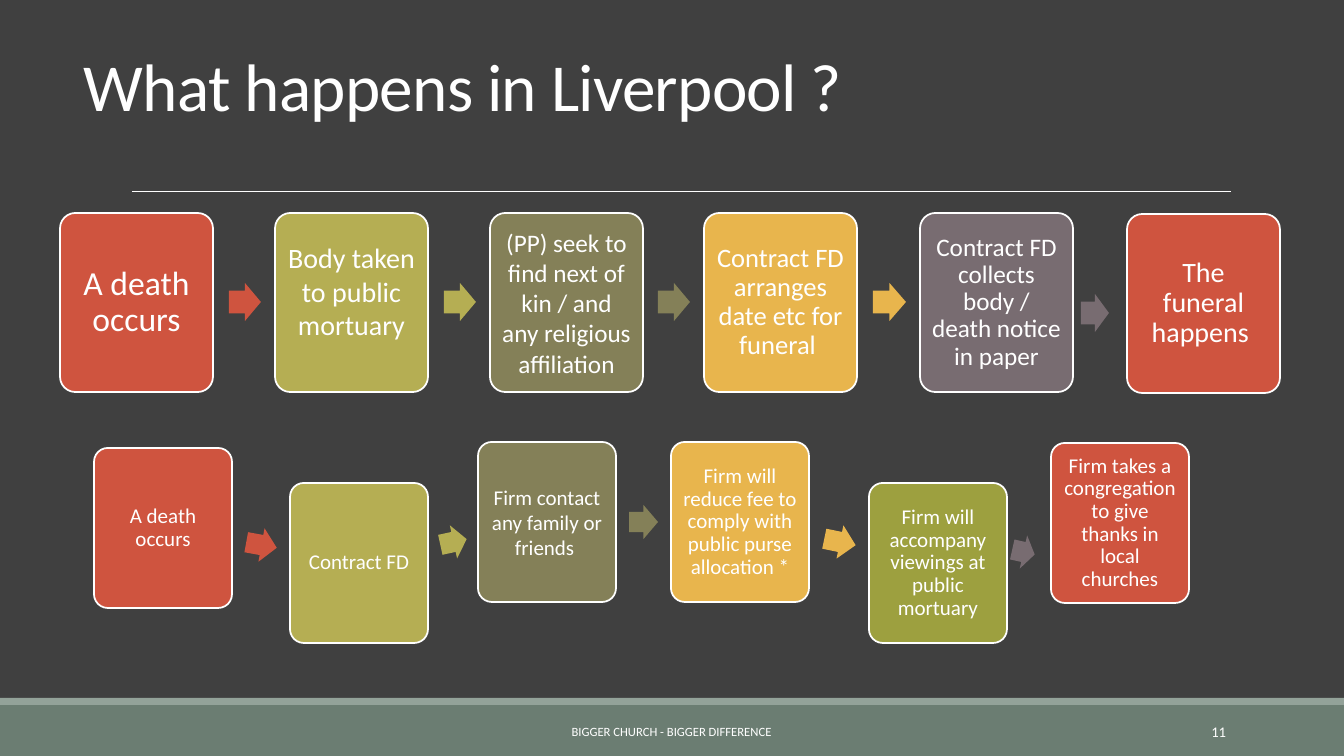
from lxml import etree
from pptx import Presentation
from pptx.dml.color import RGBColor
from pptx.enum.shapes import MSO_CONNECTOR, MSO_SHAPE
from pptx.enum.text import MSO_ANCHOR, PP_ALIGN
from pptx.oxml.ns import qn
from pptx.util import Emu, Pt

RECTANGLE = MSO_SHAPE.RECTANGLE
ROUNDED = MSO_SHAPE.ROUNDED_RECTANGLE
RIGHT_ARROW = MSO_SHAPE.RIGHT_ARROW
STRAIGHT = MSO_CONNECTOR.STRAIGHT
MIDDLE, BOTTOM = MSO_ANCHOR.MIDDLE, MSO_ANCHOR.BOTTOM
LEFT, CENTER, RIGHT = PP_ALIGN.LEFT, PP_ALIGN.CENTER, PP_ALIGN.RIGHT

PX_PER_INCH = 100.8
FONT = "Calibri"

WHITE = RGBColor(0xFF, 0xFF, 0xFF)
CHARCOAL = RGBColor(0x40, 0x40, 0x40)
FOOTER_GREEN = RGBColor(0x6B, 0x7D, 0x72)
FOOTER_EDGE = RGBColor(0x93, 0xA2, 0x99)
RED = RGBColor(0xCF, 0x54, 0x3F)
LIME = RGBColor(0xB5, 0xAE, 0x53)
OLIVE = RGBColor(0x84, 0x80, 0x58)
AMBER = RGBColor(0xE8, 0xB5, 0x4D)
MAUVE = RGBColor(0x78, 0x6C, 0x71)
MOSS = RGBColor(0x9D, 0xA0, 0x3F)

# Steps: left, top, fill, text, size, inset, line spacing, extra bottom inset
PUBLIC_BOX = (153, 179)
PUBLIC_STEPS = [
    (60, 213, RED, "A death occurs", 24, 10, 0.9, 0),
    (275, 213, LIME, "Body taken to public mortuary", 20, 8, 1.0, 23),
    (490, 213, OLIVE, "(PP) seek to find next of kin / and any religious affiliation",
     18, 7, 1.0, 0),
    (704, 213, AMBER, "Contract FD arranges date etc for funeral ", 19, 8, 0.9, 0),
    (920, 213, MAUVE, "Contract FD collects body / death notice in paper", 18, 7, 0.9, 0),
    (1127, 214, RED, "The funeral happens ", 20, 8, 0.9, 0),
]
CHURCH_BOX = (138, 160)
CHURCH_STEPS = [
    (94, 448, RED, "A death occurs", 15, 6, 0.9, 0),
    (290, 483, LIME, "Contract FD", 15, 6, 0.9, 0),
    (478, 442, OLIVE, "Firm contact any family or friends ", 15, 6, 1.0, 0),
    (671, 442, AMBER, "Firm will reduce fee to comply with public purse allocation *",
     15, 6, 0.9, 0),
    (869, 483, MOSS, "Firm will accompany viewings at public mortuary", 15, 6, 0.9, 0),
    (1051, 443, RED, "Firm takes a congregation to give thanks in local churches",
     15, 6, 0.9, 0),
]

# Arrows: left, top, width, height, rotation
PUBLIC_ARROWS = [
    (229, 283, 32, 38, 0),
    (444, 283, 32, 38, 0),
    (658, 283, 32, 38, 0),
    (873, 283, 33, 38, 0),
    (1081, 294, 28, 38, 0),
]
CHURCH_ARROWS = [
    (246, 528, 31, 34, 10.3),
    (440, 525, 27, 34, -12.3),
    (629, 505, 29, 34, 0),
    (824, 525, 32, 34, 11.7),
    (1012, 535, 23, 34, 12.6),
]
ARROW_COLORS = [RED, LIME, OLIVE, AMBER, MAUVE]


def px(length):
    return Emu(round(length * 914400 / PX_PER_INCH))


def write_text(text_frame, text, size, align, anchor, line_spacing=1.0):
    text_frame.word_wrap = True
    text_frame.vertical_anchor = anchor
    paragraph = text_frame.paragraphs[0]
    paragraph.alignment = align
    paragraph.line_spacing = line_spacing
    run = paragraph.add_run()
    run.text = text
    run.font.name = FONT
    run.font.size = Pt(size)
    run.font.color.rgb = WHITE
    return run


def add_text(slide, box, text, size, align, anchor=MIDDLE, line_spacing=1.0):
    shape = slide.shapes.add_textbox(*map(px, box))
    return write_text(shape.text_frame, text, size, align, anchor, line_spacing)


def add_filled(slide, kind, box, fill):
    shape = slide.shapes.add_shape(kind, *map(px, box))
    shape.shadow.inherit = False
    shape.fill.solid()
    shape.fill.fore_color.rgb = fill
    shape.line.fill.background()
    return shape


def add_rule(slide, left, right, y):
    rule = slide.shapes.add_connector(STRAIGHT, px(left), px(y), px(right), px(y))
    rule.line.color.rgb = WHITE
    rule.line.width = Pt(0.5)
    etree.SubElement(rule._element.spPr, qn("a:effectLst"))


def add_step(slide, box_size, step):
    left, top, fill, text, size, inset, line_spacing, extra_bottom = step
    shape = add_filled(slide, ROUNDED, (left, top, *box_size), fill)
    shape.adjustments[0] = 0.1
    shape.line.color.rgb = WHITE
    shape.line.width = Pt(1.25)
    text_frame = shape.text_frame
    text_frame.margin_left = text_frame.margin_right = text_frame.margin_top = px(inset)
    text_frame.margin_bottom = px(inset + extra_bottom)
    write_text(text_frame, text, size, CENTER, MIDDLE, line_spacing)


def add_arrow(slide, arrow, fill):
    *box, rotation = arrow
    shape = add_filled(slide, RIGHT_ARROW, box, fill)
    shape.adjustments[0] = 0.6
    shape.adjustments[1] = 0.5
    shape.rotation = rotation


def add_process(slide, box_size, steps, arrows):
    for step in steps:
        add_step(slide, box_size, step)
    for arrow, color in zip(arrows, ARROW_COLORS):
        add_arrow(slide, arrow, color)


def main():
    presentation = Presentation()
    presentation.slide_width = px(1344)
    presentation.slide_height = px(756)
    slide = presentation.slides.add_slide(presentation.slide_layouts[6])
    slide.background.fill.solid()
    slide.background.fill.fore_color.rgb = CHARCOAL

    # Title and rule
    title = add_text(slide, (74, 6, 940, 124), "What happens in Liverpool ?",
                     48, LEFT, BOTTOM, 0.85)
    title._r.get_or_add_rPr().set("spc", "-50")
    add_rule(slide, 132, 1231, 191)

    # The two processes
    add_process(slide, PUBLIC_BOX, PUBLIC_STEPS, PUBLIC_ARROWS)
    add_process(slide, CHURCH_BOX, CHURCH_STEPS, CHURCH_ARROWS)

    # Footer
    add_filled(slide, RECTANGLE, (0, 705, 1344, 51), FOOTER_GREEN)
    add_filled(slide, RECTANGLE, (0, 698, 1344, 7), FOOTER_EDGE)
    add_text(slide, (406, 712, 531, 40), "BIGGER CHURCH - BIGGER DIFFERENCE", 9, CENTER)
    add_text(slide, (1092, 712, 144, 40), "11", 10.5, RIGHT)

    presentation.save("out.pptx")


if __name__ == "__main__":
    main()
